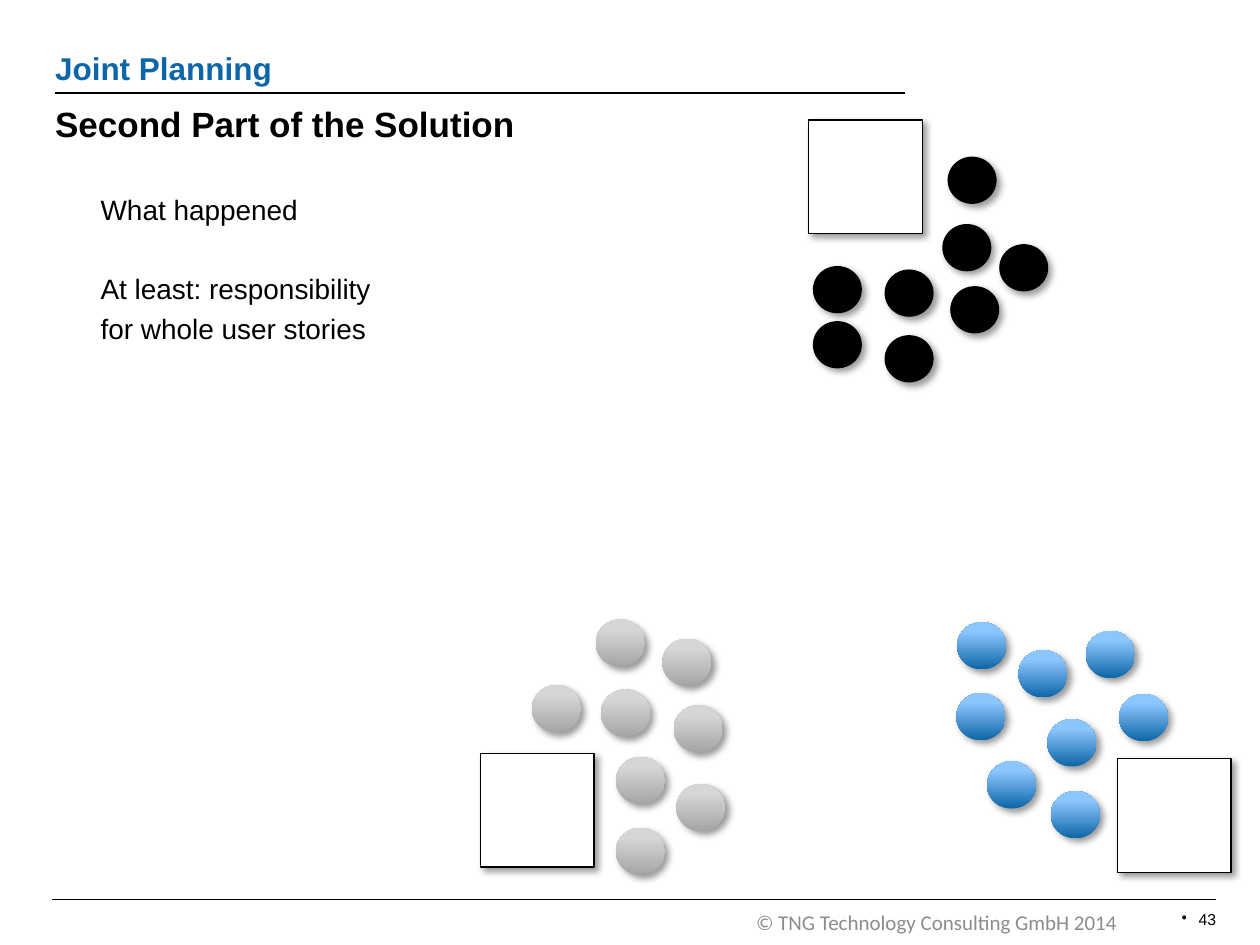
from dataclasses import dataclass
from lxml import etree
from pptx import Presentation
from pptx.dml.color import RGBColor as Rgb
from pptx.enum import shapes, text
from pptx.oxml import parse_xml
from pptx.oxml.ns import nsdecls, qn
from pptx.util import Pt


@dataclass
class Theme:
    black: str = "000000"
    white: str = "FFFFFF"
    blue: str = "0D66A7"
    sky: str = "8CC6FF"
    gray: str = "A5A5A5"
    pale: str = "D6D6D6"
    note: str = "8C8C8C"
    head: int = 20
    topic: int = 18
    body: int = 16
    foot: int = 12
    page: int = 9


theme = Theme()


def write(box, place, lines, size, color, bold=False, face="Arial", inset=0):
    box.left, box.top, box.width, box.height = map(Pt, place)
    frame = box.text_frame
    frame.word_wrap = True
    frame.auto_size = text.MSO_AUTO_SIZE.NONE
    frame.vertical_anchor = text.MSO_ANCHOR.TOP
    frame.margin_left = frame.margin_right = Pt(inset * 2)
    frame.margin_top = frame.margin_bottom = Pt(inset)
    frame.text = "\n".join(lines)
    for para in frame.paragraphs:
        para.alignment = text.PP_ALIGN.LEFT
        font = para.font
        font.name, font.size, font.bold = face, Pt(size), bold
        font.color.rgb = Rgb.from_string(color)
    return frame


def draw(kind, place, colors, edge=None):
    shape = slide.shapes.add_shape(kind, *map(Pt, place))
    if len(colors) == 1:
        shape.fill.solid()
        shape.fill.fore_color.rgb = Rgb.from_string(colors[0])
    else:
        shape.fill.gradient()
        shape.fill.gradient_angle = 90
        for stop, color, at in zip(shape.fill.gradient_stops, colors, (0, 0.8)):
            stop.color.rgb = Rgb.from_string(color)
            stop.position = at
    if edge:
        shape.line.color.rgb = Rgb.from_string(edge)
        shape.line.width = Pt(0.75)
    else:
        shape.line.fill.background()
    shape.shadow.inherit = False
    shape._element.spPr.find(qn("a:effectLst")).append(parse_xml(
        f'<a:outerShdw {nsdecls("a")} blurRad="{Pt(4)}" dist="{Pt(3)}" '
        f'dir="2700000" algn="tl" rotWithShape="0"><a:srgbClr val="{theme.black}">'
        '<a:alpha val="40000"/></a:srgbClr></a:outerShdw>'))


deck = Presentation()
deck.slide_width, deck.slide_height = Pt(720), Pt(540)
slide = deck.slides.add_slide(deck.slide_layouts[1])

for left, right, y in ((29.5, 695, 514), (31.5, 517, 53.3)):
    rule = slide.shapes.add_connector(
        shapes.MSO_CONNECTOR.STRAIGHT, Pt(left), Pt(y), Pt(right), Pt(y))
    rule.line.color.rgb = Rgb.from_string(theme.black)
    rule.line.width = Pt(1)
    etree.SubElement(rule._element.spPr, qn("a:effectLst"))

write(slide.shapes.title, (31.5, 58.5, 487.5, 24.5),
      ["Second Part of the Solution"], theme.head, theme.black, True)

body = slide.placeholders[1]
items = ["What happened", "At least: responsibility", "for whole user stories"]
body.text_frame.text = "\n".join(items)
frame = write(body, (29.5, 110, 664.5, 89.5), items, theme.body, theme.black)
for para, gap in zip(frame.paragraphs, (0, 25.8, 3.7)):
    para.space_before = Pt(gap)
    props = para._p.get_or_add_pPr()
    props.set("marL", str(Pt(28)))
    props.set("indent", "0")
    props.find(qn("a:defRPr")).addprevious(etree.Element(qn("a:buNone")))

topic, credit, page = (slide.shapes.add_textbox(0, 0, 0, 0) for _ in range(3))
frame = write(topic, (31.5, 28, 481.5, 21.5), ["Joint Planning"],
              theme.topic, theme.blue, True)
frame.vertical_anchor = text.MSO_ANCHOR.BOTTOM
write(credit, (432, 520, 234.5, 14.5), ["© TNG Technology Consulting GmbH 2014"],
      theme.foot, theme.note, face="Calibri")
frame = write(page, (668, 516.5, 34, 18), ["43"], theme.page, theme.black, inset=3.6)
para = frame.paragraphs[0]
para.alignment = text.PP_ALIGN.RIGHT
props = para._p.get_or_add_pPr()
props.set("marL", str(Pt(9.7)))
props.set("indent", str(-Pt(9.7)))
mark = etree.Element(qn("a:buChar"), char="•")
props.find(qn("a:defRPr")).addprevious(mark)

teams = [
    ([theme.black], (462, 68.5),
     [(538.5, 128), (505.5, 191.5), (464.5, 152), (464.5, 183.5),
      (543, 163.5), (571, 139.5), (541.5, 89.5), (505.5, 154)]),
    ([theme.gray, theme.pale], (274.5, 430.5),
     [(352, 473), (304, 391.5), (378.5, 365), (340.5, 354),
      (343.5, 394), (386.5, 448), (352, 432.5), (385, 403)]),
    ([theme.blue, theme.sky], (638.5, 433.5),
     [(547, 355.5), (600.5, 452), (620.5, 360.5), (598.5, 411),
      (546.5, 396), (639.5, 396.5), (582, 371.5), (564, 435)]),
]
for colors, desk, people in teams:
    for spot in people:
        draw(shapes.MSO_SHAPE.OVAL, (*spot, 28, 27), colors)
    draw(shapes.MSO_SHAPE.RECTANGLE, (*desk, 65, 65), [theme.white], theme.black)

deck.save("out.pptx")
